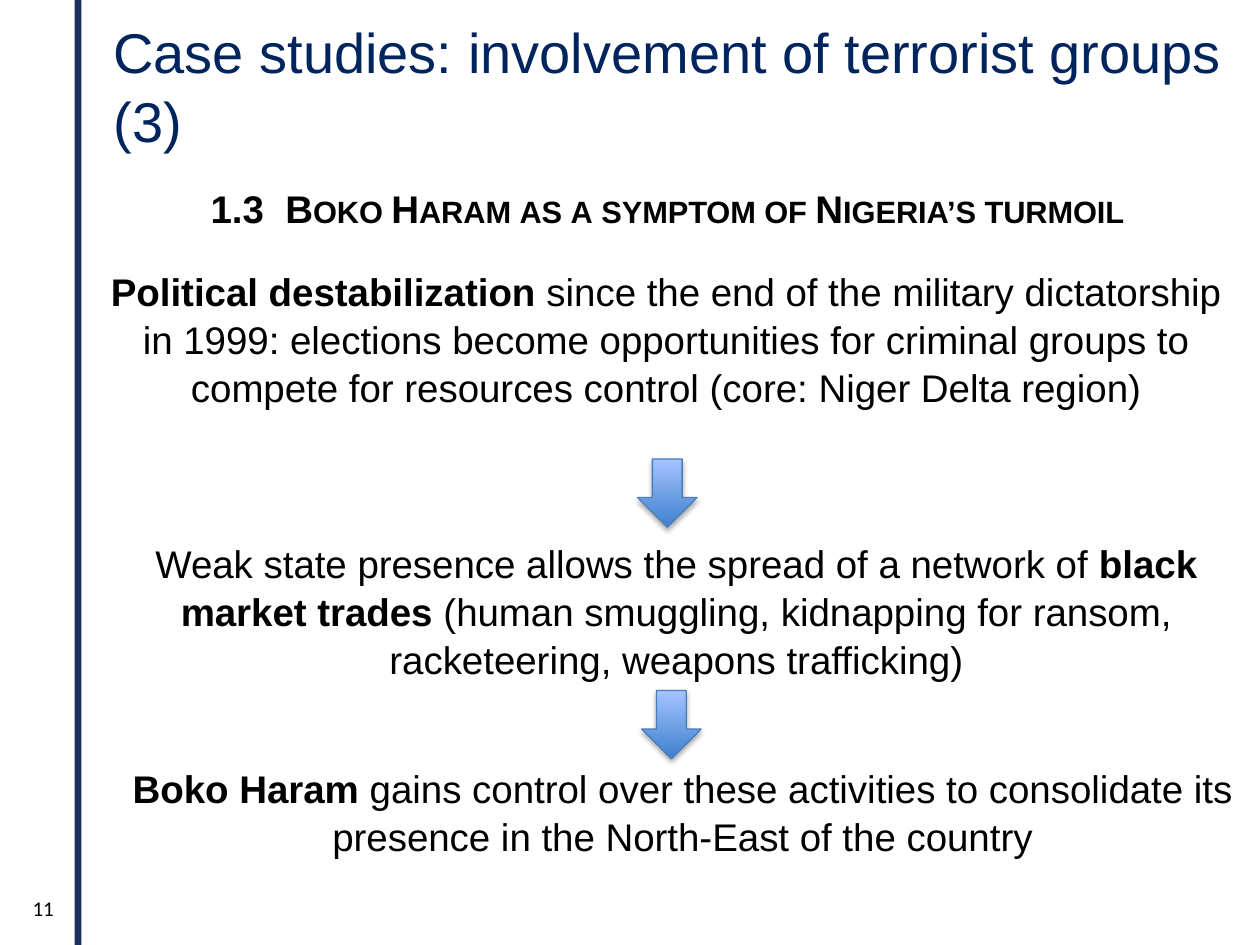
from typing import NamedTuple

from lxml.etree import SubElement
from pptx import Presentation
from pptx.dml.color import RGBColor
from pptx.enum.shapes import MSO_SHAPE as Preset
from pptx.enum.text import MSO_ANCHOR as Anchor, MSO_AUTO_SIZE as AutoSize, PP_ALIGN as Align
from pptx.oxml.ns import qn
from pptx.util import Pt

NAVY = RGBColor(0x00, 0x24, 0x5D)
BAR_BLUE = RGBColor(0x1C, 0x30, 0x5B)
BLACK = RGBColor(0x00, 0x00, 0x00)
ARROW_DARK = RGBColor(0x3F, 0x80, 0xCE)
ARROW_LIGHT = RGBColor(0xA4, 0xC4, 0xFF)
ARROW_LINE = RGBColor(0x4B, 0x7E, 0xBC)

SLIDE_WIDTH, SLIDE_HEIGHT = 720, 540
ARROW_WIDTH, ARROW_HEIGHT = 34, 39
LINE_SPACING = 1.045


class Box(NamedTuple):
    left: float
    top: float
    width: float
    height: float


class Phrase(NamedTuple):
    text: str
    bold: bool = False
    small_caps: bool = False


class TextBlock(NamedTuple):
    box: Box
    phrases: list[Phrase]
    size: float = 22
    align: Align = Align.CENTER
    font: str = "Arial"
    color: RGBColor = BLACK
    spacing: float = LINE_SPACING


TITLE = TextBlock(
    Box(57.6, 4.6, 654, 82),
    [Phrase("Case studies: involvement of terrorist groups (3)")],
    size=32, align=Align.LEFT, color=NAVY,
)

BLOCKS = [
    # Section heading
    TextBlock(Box(68.4, 101, 626, 40), [
        Phrase("1.3  ", bold=True),
        Phrase("Boko Haram as a symptom of Nigeria’s turmoil", bold=True, small_caps=True),
    ]),
    # Chain of causes
    TextBlock(Box(48.2, 148.5, 665, 93), [
        Phrase("Political destabilization", bold=True),
        Phrase(" since the end of the military dictatorship in 1999: elections become "
               "opportunities for criminal groups to compete for resources control "
               "(core: Niger Delta region)"),
    ]),
    TextBlock(Box(54, 304, 665, 93), [
        Phrase("Weak state presence allows the spread of a network of "),
        Phrase("black market trades", bold=True),
        Phrase(" (human smuggling, kidnapping for ransom, racketeering, weapons trafficking)"),
    ]),
    TextBlock(Box(57.6, 432.5, 665, 66), [
        Phrase("Boko Haram ", bold=True),
        Phrase("gains control over these activities to consolidate its presence "
               "in the North-East of the country"),
    ]),
    # Slide number
    TextBlock(Box(11.5, 508.3, 32.4, 28.8), [Phrase("11")],
              size=12, align=Align.LEFT, font="Calibri", spacing=1),
]

ARROWS = [
    Box(364.3, 262.3, ARROW_WIDTH, ARROW_HEIGHT),
    Box(366.7, 394.6, ARROW_WIDTH, ARROW_HEIGHT),
]


def place(shape, box: Box) -> None:
    shape.left, shape.top, shape.width, shape.height = map(Pt, box)


def write_text(shape, block: TextBlock) -> None:
    frame = shape.text_frame
    frame.word_wrap = True
    frame.auto_size = AutoSize.NONE
    frame.vertical_anchor = Anchor.TOP
    paragraph = frame.paragraphs[0]
    paragraph.alignment = block.align
    paragraph.line_spacing = block.spacing
    paragraph.space_before = Pt(0)
    for phrase in block.phrases:
        run = paragraph.add_run()
        run.text = phrase.text
        run.font.name = block.font
        run.font.size = Pt(block.size)
        run.font.bold = phrase.bold
        run.font.color.rgb = block.color
        if phrase.small_caps:
            run._r.get_or_add_rPr().set("cap", "small")


def add_text(slide, block: TextBlock) -> None:
    write_text(slide.shapes.add_textbox(*map(Pt, block.box)), block)


def add_bar(slide) -> None:
    bar = slide.shapes.add_shape(Preset.RECTANGLE, Pt(42.7), Pt(0), Pt(3.8), Pt(SLIDE_HEIGHT))
    bar.shadow.inherit = False
    bar.fill.solid()
    bar.fill.fore_color.rgb = BAR_BLUE
    bar.line.fill.background()


def add_shadow(shape) -> None:
    shape.shadow.inherit = False
    effects = shape._element.spPr.find(qn("a:effectLst"))
    shadow = SubElement(effects, qn("a:outerShdw"), blurRad=str(Pt(3.1)), dist=str(Pt(1.8)),
                        dir="5400000", rotWithShape="0")
    color = SubElement(shadow, qn("a:srgbClr"), val=str(BLACK))
    SubElement(color, qn("a:alpha"), val="35000")


def add_arrow(slide, box: Box) -> None:
    arrow = slide.shapes.add_shape(Preset.DOWN_ARROW, *map(Pt, box))
    arrow.fill.gradient()
    arrow.fill.gradient_angle = 90
    for stop, color in zip(arrow.fill.gradient_stops, (ARROW_DARK, ARROW_LIGHT)):
        stop.color.rgb = color
    arrow.line.color.rgb = ARROW_LINE
    arrow.line.width = Pt(0.75)
    add_shadow(arrow)


def main() -> None:
    presentation = Presentation()
    presentation.slide_width = Pt(SLIDE_WIDTH)
    presentation.slide_height = Pt(SLIDE_HEIGHT)
    slide = presentation.slides.add_slide(presentation.slide_layouts.get_by_name("Title Only"))

    add_bar(slide)
    place(slide.shapes.title, TITLE.box)
    write_text(slide.shapes.title, TITLE)
    for block in BLOCKS:
        add_text(slide, block)
    for box in ARROWS:
        add_arrow(slide, box)

    presentation.save("out.pptx")


if __name__ == "__main__":
    main()
